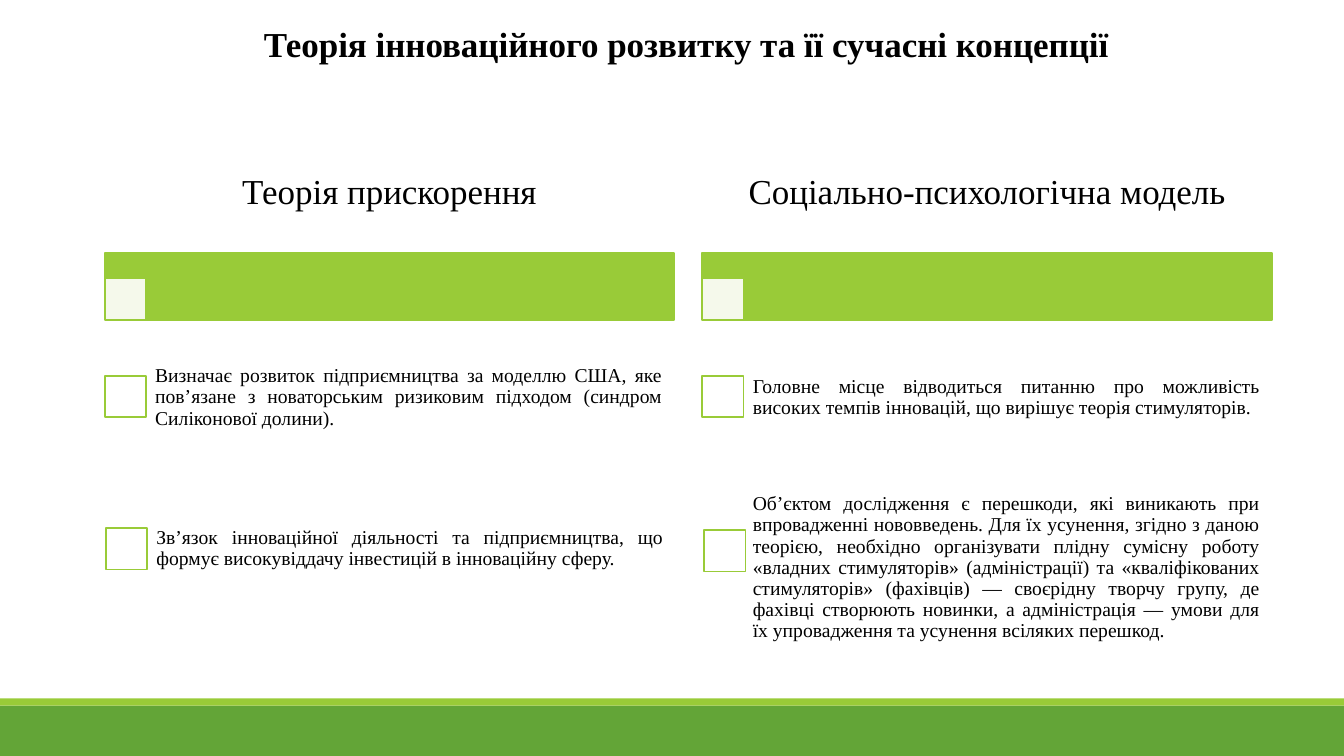
"""Build a slide comparing two theories of innovative development."""
from dataclasses import dataclass
from typing import Optional

from lxml.etree import SubElement
from pptx import Presentation
from pptx.dml.color import RGBColor
from pptx.enum.shapes import MSO_SHAPE
from pptx.enum.text import MSO_ANCHOR, MSO_AUTO_SIZE, PP_ALIGN
from pptx.oxml.ns import qn
from pptx.util import Cm, Pt

BLACK = RGBColor(0x00, 0x00, 0x00)
WHITE = RGBColor(0xFF, 0xFF, 0xFF)
LIME = RGBColor(0x99, 0xCB, 0x38)
GREEN = RGBColor(0x63, 0xA5, 0x37)
FONT = "Times New Roman"
SLIDE_W, SLIDE_H = 33.87, 19.05
COLUMN_W, BOX = 14.35, 1.04
ITEM_W = 13.34


@dataclass
class Item:
    text: str
    left: float
    top: float
    height: float
    box_left: float
    box_top: float


@dataclass
class Column:
    heading: str
    left: float
    items: list[Item]


COLUMNS = [
    Column("Теорія прискорення", 2.64, [
        Item("Визначає розвиток підприємництва за моделлю США, яке пов’язане з новаторським "
             "ризиковим підходом (синдром Силіконової долини).",
             3.63, 8.79, 2.46, 2.64, 9.47),
        Item("Зв’язок інноваційної діяльності та підприємництва, що формує високувіддачу "
             "інвестицій в інноваційну сферу.",
             3.66, 12.6, 2.46, 2.67, 13.31),
    ]),
    Column("Соціально-психологічна модель", 17.7, [
        Item("Головне місце відводиться питанню про можливість високих темпів інновацій, "
             "що вирішує теорія стимуляторів.",
             18.69, 8.79, 2.46, 17.7, 9.47),
        Item("Об’єктом дослідження є перешкоди, які виникають при впровадженні нововведень. "
             "Для їх усунення, згідно з даною теорією, необхідно організувати плідну сумісну "
             "роботу «владних стимуляторів» (адміністрації) та «кваліфікованих стимуляторів» "
             "(фахівців) — своєрідну творчу групу, де фахівці створюють новинки, а адміністрація "
             "— умови для їх упровадження та усунення всіляких перешкод.",
             18.69, 11.96, 4.7, 17.75, 13.36),
    ]),
]


def add_rect(s, left: float, top: float, width: float, height: float,
             fill: RGBColor, line: Optional[RGBColor] = None):
    sp = s.shapes.add_shape(MSO_SHAPE.RECTANGLE, Cm(left), Cm(top), Cm(width), Cm(height))
    sp.shadow.inherit = False
    sp.fill.solid()
    sp.fill.fore_color.rgb = fill
    if line is None:
        sp.line.fill.background()
    else:
        sp.line.color.rgb = line
        sp.line.width = Pt(1.25)
    return sp


def place(sp, left: float, top: float, width: float, height: float) -> None:
    sp.left, sp.top, sp.width, sp.height = Cm(left), Cm(top), Cm(width), Cm(height)


def write(sp, text: str, size: float, align: PP_ALIGN, inset: tuple[float, float],
          anchor: MSO_ANCHOR = MSO_ANCHOR.MIDDLE, wrap: bool = True,
          bold: bool = False, spacing: float = 0.9) -> None:
    tf = sp.text_frame
    tf.auto_size = MSO_AUTO_SIZE.NONE
    tf.word_wrap = wrap
    tf.vertical_anchor = anchor
    tf.margin_left = tf.margin_right = Cm(inset[0])
    tf.margin_top = tf.margin_bottom = Cm(inset[1])
    p = tf.paragraphs[0]
    p.text = text
    p.alignment = align
    p.line_spacing = spacing
    p.space_before = p.space_after = Pt(0)
    p.font.name, p.font.size, p.font.bold = FONT, Pt(size), bold
    p.font.color.rgb = BLACK


def remove_bullet(sp) -> None:
    for p in sp.text_frame.paragraphs:
        props = p._p.get_or_add_pPr()
        props.set("marL", "0")
        props.set("indent", "0")
        props.insert_element_before(props.makeelement(qn("a:buNone")),
                                    "a:tabLst", "a:defRPr", "a:extLst")


def draw_column(s, column: Column) -> None:
    add_rect(s, column.left, 6.38, COLUMN_W, 1.68, LIME, LIME)
    chip = add_rect(s, column.left, 7.01, BOX, BOX, WHITE, LIME)
    color = chip.fill._xPr.find(qn("a:solidFill"))[0]
    SubElement(color, qn("a:alpha")).set("val", "90000")
    heading = s.shapes.add_textbox(Cm(column.left), Cm(3.35), Cm(COLUMN_W), Cm(3.02))
    write(heading, column.heading, 25, PP_ALIGN.CENTER, (0.13, 0.08))


def draw_item(s, sp, item: Item) -> None:
    add_rect(s, item.box_left, item.box_top, BOX, BOX, WHITE, LIME)
    place(sp, item.left, item.top, ITEM_W, item.height)
    write(sp, item.text, 14, PP_ALIGN.JUSTIFY, (0.28, 0.28))
    remove_bullet(sp)


def main() -> None:
    prs = Presentation()
    prs.slide_width, prs.slide_height = Cm(SLIDE_W), Cm(SLIDE_H)
    s = prs.slides.add_slide(prs.slide_layouts.get_by_name("Comparison"))
    bodies = [sp for sp in s.placeholders if sp.placeholder_format.idx > 0]
    add_rect(s, 0, 17.78, SLIDE_W, 1.27, GREEN)
    add_rect(s, 0, 17.6, SLIDE_W, 0.18, LIME)
    title = s.shapes.title
    place(title, 6.4, 0.43, 22.28, 1.32)
    write(title, "Теорія інноваційного розвитку та її сучасні концепції", 25, PP_ALIGN.LEFT,
          (0.25, 0.13), MSO_ANCHOR.TOP, wrap=False, bold=True, spacing=1.0)
    for column in COLUMNS:
        draw_column(s, column)
    items = [item for column in COLUMNS for item in column.items]
    for sp, item in zip(bodies, items):
        draw_item(s, sp, item)
    prs.save("out.pptx")


if __name__ == "__main__":
    main()
